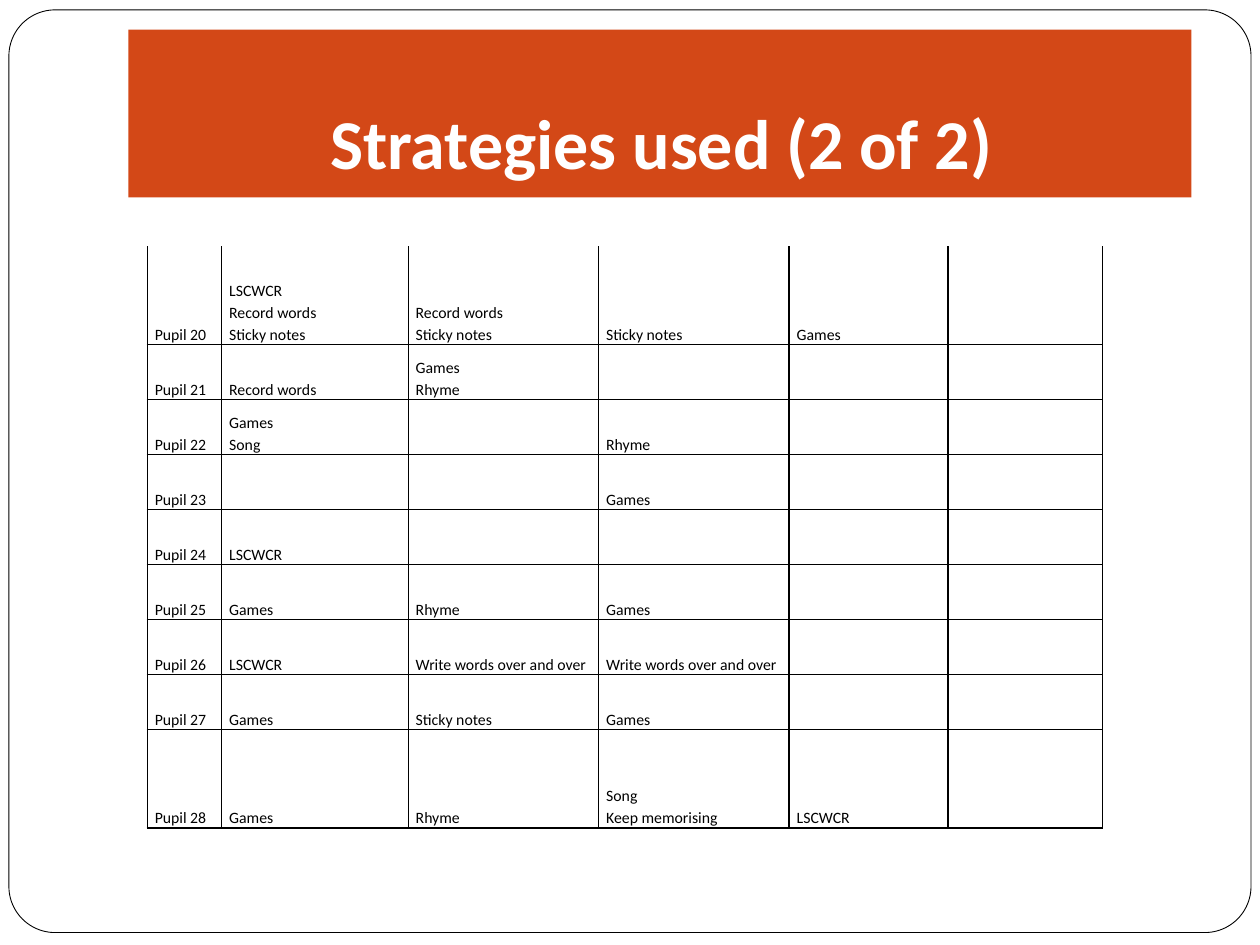
from lxml import etree
from pptx import Presentation
from pptx.dml.color import RGBColor
from pptx.enum.shapes import MSO_SHAPE
from pptx.enum.text import MSO_ANCHOR, MSO_AUTO_SIZE, PP_ALIGN
from pptx.oxml.ns import qn
from pptx.util import Cm, Pt

RECTANGLE = MSO_SHAPE.RECTANGLE
ROUNDED = MSO_SHAPE.ROUNDED_RECTANGLE
BOTTOM = MSO_ANCHOR.BOTTOM
NO_AUTOFIT = MSO_AUTO_SIZE.NONE
CENTER = PP_ALIGN.CENTER
TITLE_ONLY = 5

COLUMN_WIDTHS = [1.5, 3.76, 3.84, 3.84, 3.2, 3.12]
TALL_ROW, ROW = 1.98, 1.11
STRATEGIES = [
    ["Pupil 20", "LSCWCR\nRecord words\nSticky notes", "Record words\nSticky notes",
     "Sticky notes", "Games", ""],
    ["Pupil 21", "Record words", "Games\nRhyme", "", "", ""],
    ["Pupil 22", "Games\nSong", "", "Rhyme", "", ""],
    ["Pupil 23", "", "", "Games", "", ""],
    ["Pupil 24", "LSCWCR", "", "", "", ""],
    ["Pupil 25", "Games", "Rhyme", "Games", "", ""],
    ["Pupil 26", "LSCWCR", "Write words over and over", "Write words over and over", "", ""],
    ["Pupil 27", "Games", "Sticky notes", "Games", "", ""],
    ["Pupil 28", "Games", "Rhyme", "Song\nKeep memorising", "LSCWCR", ""],
]


def color(value):
    return RGBColor.from_string(value)


def apply(target, values):
    for name, value in values.items():
        setattr(target, name, value)


class StrategySlide:
    font = "Calibri"
    ink = "000000"
    paper = "FFFFFF"
    accent = "D34817"

    def __init__(self, deck):
        self.slide = deck.slides.add_slide(deck.slide_layouts[TITLE_ONLY])

    def panel(self, kind, box, fill, line=None):
        panel = self.slide.shapes.add_shape(kind, *map(Cm, box))
        panel.shadow.inherit = False
        panel.fill.solid()
        panel.fill.fore_color.rgb = color(fill)
        if line:
            panel.line.color.rgb = color(line)
            panel.line.width = Pt(0.5)
        else:
            panel.line.fill.background()
        return panel

    def style_runs(self, paragraph, size, ink, bold=False):
        for run in paragraph.runs:
            apply(run.font, {"name": self.font, "size": Pt(size), "bold": bold})
            run.font.color.rgb = color(ink)

    def title(self, wording, box):
        heading = self.slide.shapes.title
        self.slide.shapes._spTree.append(heading._element)
        apply(heading, dict(zip(("left", "top", "width", "height"), map(Cm, box))))
        frame = heading.text_frame
        apply(frame, {
            "text": wording, "word_wrap": True, "auto_size": NO_AUTOFIT,
            "vertical_anchor": BOTTOM, "margin_left": Cm(0.25), "margin_right": Cm(0.25),
            "margin_top": Cm(0.13), "margin_bottom": Cm(0.25),
        })
        frame.paragraphs[0].alignment = CENTER
        self.style_runs(frame.paragraphs[0], 40, self.paper, bold=True)

    def borders(self, cell, open_top):
        properties = cell._tc.get_or_add_tcPr()
        for side in ("lnL", "lnR", "lnT", "lnB"):
            border = etree.SubElement(properties, qn(f"a:{side}"), w=str(Pt(1)))
            if side == "lnT" and open_top:
                etree.SubElement(border, qn("a:noFill"))
            else:
                paint = etree.SubElement(border, qn("a:solidFill"))
                etree.SubElement(paint, qn("a:srgbClr"), val=self.ink)

    def cell(self, cell, wording, open_top):
        apply(cell, {
            "vertical_anchor": BOTTOM, "margin_left": Cm(0.15), "margin_right": Cm(0.15),
            "margin_top": 0, "margin_bottom": 0,
        })
        self.borders(cell, open_top)
        cell.fill.background()
        if wording:
            paragraph = cell.text_frame.paragraphs[0]
            apply(paragraph, {"text": wording, "line_spacing": 1.15})
            self.style_runs(paragraph, 9, self.ink)
            for line_break in paragraph._p.findall(qn("a:br")):
                etree.SubElement(line_break, qn("a:rPr"), sz="900")

    def table(self, rows, left, top, widths, heights):
        table = self.slide.shapes.add_table(
            len(rows), len(widths), Cm(left), Cm(top), Cm(sum(widths)), Cm(sum(heights))
        ).table
        apply(table, {"first_row": False, "horz_banding": False})
        for column, width in zip(table.columns, widths):
            column.width = Cm(width)
        for index, (wordings, height) in enumerate(zip(rows, heights)):
            table.rows[index].height = Cm(height)
            for position, wording in enumerate(wordings):
                self.cell(table.cell(index, position), wording, open_top=index == 0)


def main():
    deck = Presentation()
    apply(deck, {"slide_width": Cm(25.4), "slide_height": Cm(19.05)})
    page = StrategySlide(deck)
    frame = page.panel(ROUNDED, (0.18, 0.2, 25.04, 18.6), page.paper, page.ink)
    frame.adjustments[0] = 0.05
    page.panel(RECTANGLE, (2.59, 0.6, 21.43, 3.38), page.accent)
    page.title("Strategies used (2 of 2)", (2.54, 0.76, 21.59, 3.18))
    heights = [TALL_ROW] + [ROW] * (len(STRATEGIES) - 2) + [TALL_ROW]
    page.table(STRATEGIES, 2.97, 4.96, COLUMN_WIDTHS, heights)
    deck.save("out.pptx")


if __name__ == "__main__":
    main()
